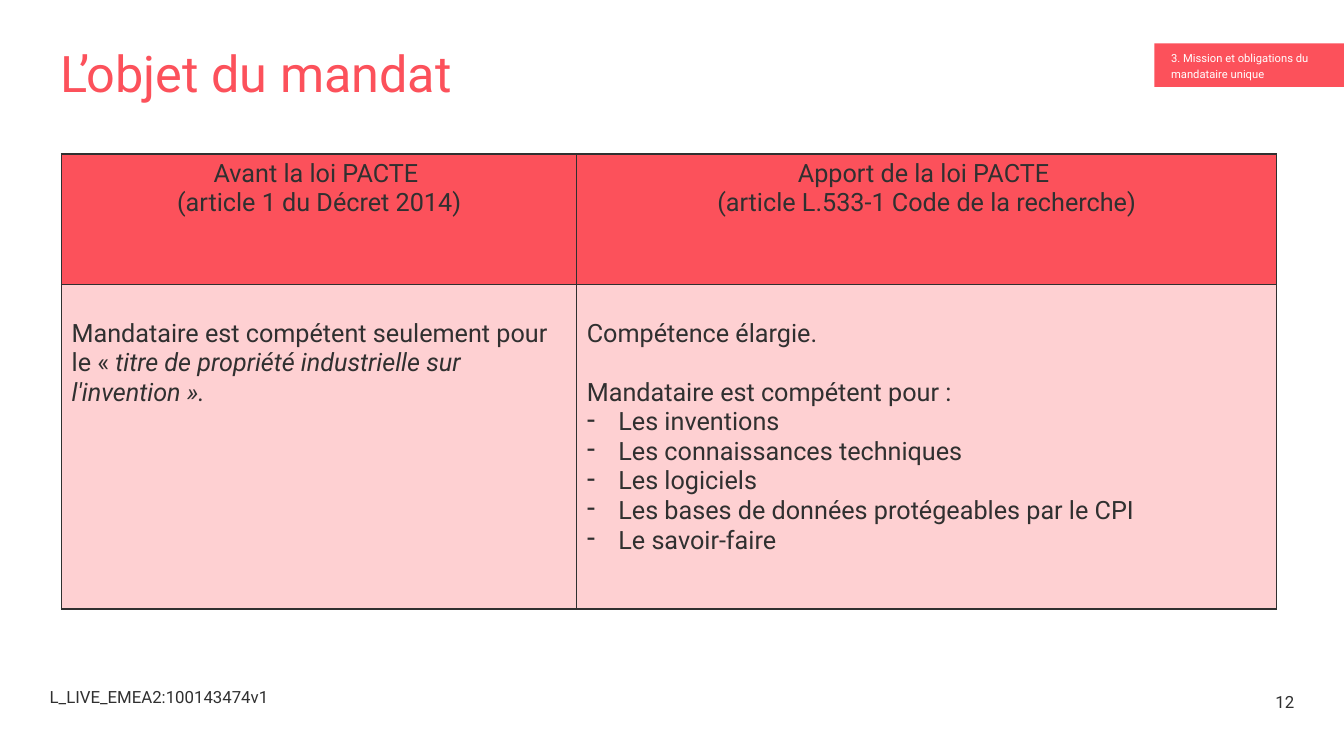
from lxml import etree
from pptx import Presentation
from pptx.dml.color import RGBColor
from pptx.enum.text import MSO_ANCHOR, MSO_AUTO_SIZE, PP_ALIGN
from pptx.oxml.ns import qn
from pptx.util import Pt

LEFT, CENTER, RIGHT = PP_ALIGN.LEFT, PP_ALIGN.CENTER, PP_ALIGN.RIGHT
TOP, MIDDLE, BOTTOM = MSO_ANCHOR.TOP, MSO_ANCHOR.MIDDLE, MSO_ANCHOR.BOTTOM
NO_FIT = MSO_AUTO_SIZE.NONE

COLORS = {"red": "FC515B", "pink": "FED0D2", "ink": "303030", "white": "FFFFFF"}
FONT = "Roboto"

TITLE = "L’objet du mandat"
SECTION = "3. Mission et obligations du mandataire unique"
DOC_ID = "L_LIVE_EMEA2:100143474v1"
PAGE = "12"
HEADS = [
    ["Avant la loi PACTE ", "(article 1 du Décret 2014)"],
    ["Apport de la loi PACTE ", "(article L.533-1 Code de la recherche)"],
]
BEFORE = "Mandataire est compétent seulement pour le «"
QUOTE = " titre de propriété industrielle sur l'invention »."
INTRO = ["Compétence élargie.", "Mandataire est compétent pour :"]
ITEMS = [
    "Les inventions",
    "Les connaissances techniques",
    "Les logiciels",
    "Les bases de données protégeables par le CPI",
    "Le savoir-faire",
]

COLS, ROWS = [368, 500], [93, 232]
TABLE_X, TABLE_Y = 44, 110
LINE = 21.1  # height of one line of table text
INDENT = 22.5


def rgb(name):
    return RGBColor.from_string(COLORS[name])


def style(para, size, color="ink", align=LEFT, spacing=None):
    para.alignment = align
    if spacing:
        para.line_spacing = spacing
    for run in para.runs:
        font = run.font
        font.name, font.size, font.bold = FONT, Pt(size), False
        font.color.rgb = rgb(color)


def fill_box(shape, box, text, size, color="ink", align=LEFT, anchor=TOP,
             spacing=None, inset=0):
    shape.left, shape.top, shape.width, shape.height = map(Pt, box)
    frame = shape.text_frame
    frame.text = text
    frame.word_wrap = True
    frame.auto_size = NO_FIT
    frame.vertical_anchor = anchor
    frame.margin_left = Pt(inset)
    frame.margin_top = frame.margin_right = frame.margin_bottom = 0
    style(frame.paragraphs[0], size, color, align, spacing)


def set_bullet(para, char=None):
    """Give the paragraph a hanging bullet, or none at all."""
    props = para._p.get_or_add_pPr()
    indent = Pt(INDENT) if char else 0
    props.set("marL", str(indent))
    props.set("indent", str(-indent))
    mark = etree.SubElement(props, qn("a:buChar" if char else "a:buNone"))
    if char:
        mark.set("char", char)


def paint(cell, color):
    cell.fill.solid()
    cell.fill.fore_color.rgb = rgb(color)
    props = cell._tc.get_or_add_tcPr()
    for spot, side in enumerate("LRTB"):
        line = etree.Element(qn("a:ln" + side), w=str(Pt(1)))
        solid = etree.SubElement(line, qn("a:solidFill"))
        etree.SubElement(solid, qn("a:srgbClr"), val=COLORS["ink"])
        props.insert(spot, line)


def add_table(slide):
    frame = slide.shapes.add_table(2, 2, Pt(TABLE_X), Pt(TABLE_Y),
                                   Pt(sum(COLS)), Pt(sum(ROWS)))
    table = frame.table
    table.first_row = table.horz_banding = False
    for col, width in zip(table.columns, COLS):
        col.width = Pt(width)
    for row, height in zip(table.rows, ROWS):
        row.height = Pt(height)

    for col, lines in enumerate(HEADS):
        head, body = table.cell(0, col), table.cell(1, col)
        paint(head, "red")
        paint(body, "pink")
        body.margin_top = Pt(3.6 + LINE)
        head.text_frame.text = "\n".join(lines)
        for para in head.text_frame.paragraphs:
            style(para, 18, align=CENTER)

    old = table.cell(1, 0).text_frame.paragraphs[0]
    old.text = BEFORE
    quote = old.add_run()
    quote.text = QUOTE
    quote.font.italic = True
    style(old, 18)

    new = table.cell(1, 1).text_frame
    new.text = "\n".join(INTRO + ITEMS)
    for num, para in enumerate(new.paragraphs):
        if num >= len(INTRO):
            set_bullet(para, "-")
        elif num:
            para.space_before = Pt(LINE)
        style(para, 18)


def main():
    deck = Presentation()
    deck.slide_width, deck.slide_height = Pt(960), Pt(540)
    slide = deck.slides.add_slide(deck.slide_layouts[1])
    title, tag = slide.placeholders

    fill_box(title, (43.5, 35.3, 689, 31), TITLE, 36, "red", spacing=0.9)
    add_table(slide)

    fill_box(tag, (824.5, 31, 135.5, 31), SECTION, 8, "white",
             anchor=MIDDLE, spacing=1.2, inset=12)
    tag.fill.solid()
    tag.fill.fore_color.rgb = rgb("red")
    label = tag.text_frame.paragraphs[0]
    set_bullet(label)
    label.space_before = Pt(0)

    foot = slide.shapes.add_textbox(0, 0, 0, 0)
    fill_box(foot, (35.5, 490.5, 300, 19.5), DOC_ID, 12)
    number = slide.shapes.add_textbox(0, 0, 0, 0)
    fill_box(number, (899, 489.5, 25.5, 19.5), PAGE, 12, align=RIGHT,
             anchor=BOTTOM, spacing=0.9)
    deck.save("out.pptx")


if __name__ == "__main__":
    main()
